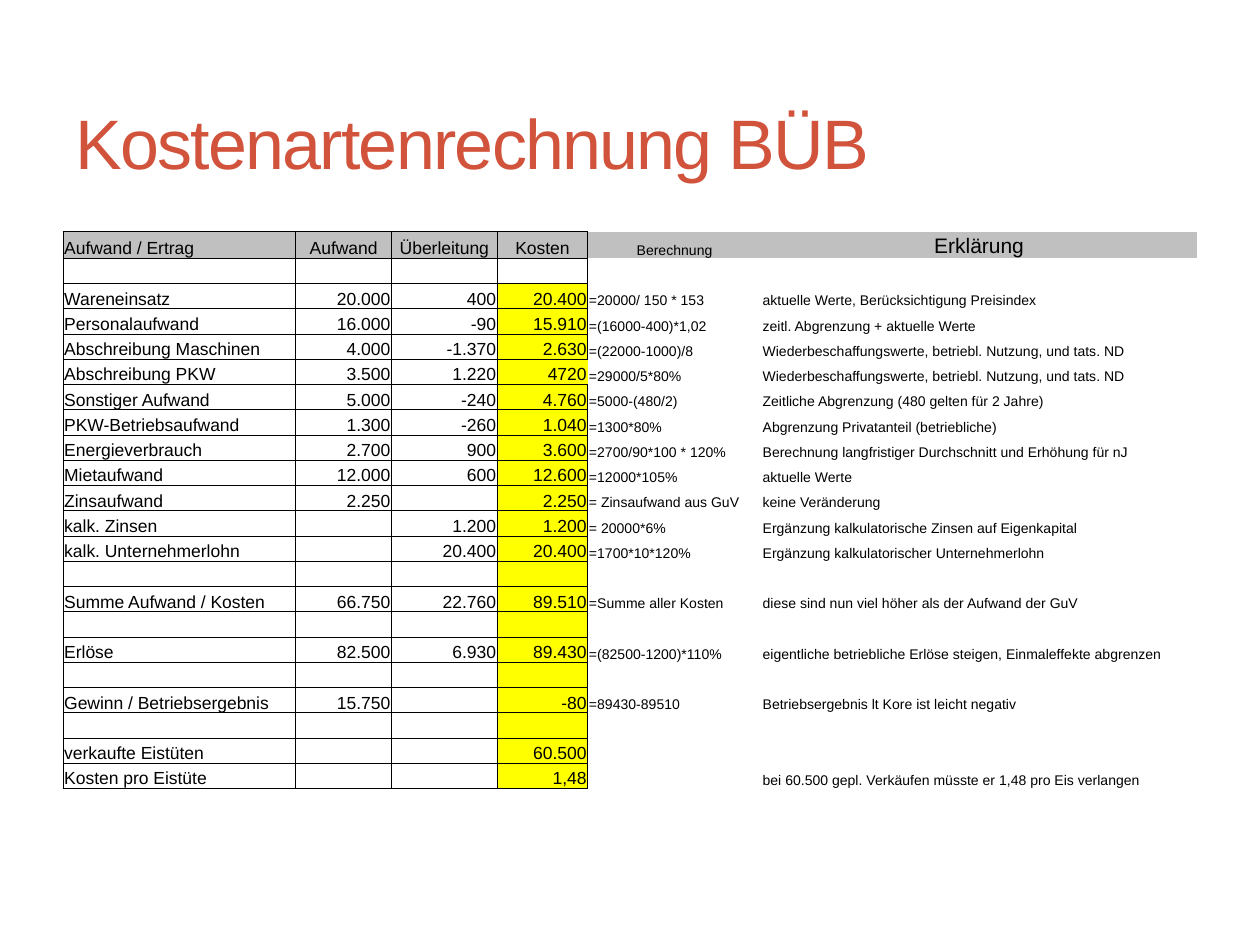
import pptx
import pptx.util
import pptx.dml.color
import pptx.enum.text
import pptx.oxml.ns
from lxml import etree

Inches, Pt = pptx.util.Inches, pptx.util.Pt
RGBColor = pptx.dml.color.RGBColor
ALIGN, ANCHOR = pptx.enum.text.PP_ALIGN, pptx.enum.text.MSO_ANCHOR
qn = pptx.oxml.ns.qn

RED = RGBColor(0xD2, 0x53, 0x3C)
BLACK = RGBColor(0, 0, 0)
GREY = RGBColor(0xC0, 0xC0, 0xC0)
YELLOW = RGBColor(0xFF, 0xFF, 0)
FONT = "Arial"
NO_STYLE = "{2D5ABB26-0587-4C30-8999-92F81FD0307C}"

COL_SHARES = (1.85, 0.76, 0.84, 0.72, 1.38, 3.46)
ROW_COUNT = 22
COST, GRID_COLS = 3, 4  # cost column; columns that carry a grid
HEADER_SIZES = (10, 10, 10, 10, 8, 12)
BODY_SIZES = (10, 10, 10, 10, 8, 8)
OPEN_ROW = "Abschreibung PKW"  # its cost cell is open on the right

BLANK = ("",) * 6
ROWS = [
    ("Aufwand / Ertrag", "Aufwand", "Überleitung", "Kosten", "Berechnung", "Erklärung"),
    BLANK,
    ("Wareneinsatz", "20.000", "400", "20.400", "=20000/ 150 * 153",
     "aktuelle Werte, Berücksichtigung Preisindex"),
    ("Personalaufwand", "16.000", "-90", "15.910", "=(16000-400)*1,02",
     "zeitl. Abgrenzung + aktuelle Werte"),
    ("Abschreibung Maschinen", "4.000", "-1.370", "2.630", "=(22000-1000)/8",
     "Wiederbeschaffungswerte, betriebl. Nutzung, und tats. ND"),
    (OPEN_ROW, "3.500", "1.220", "4720", "=29000/5*80%",
     "Wiederbeschaffungswerte, betriebl. Nutzung, und tats. ND"),
    ("Sonstiger Aufwand", "5.000", "-240", "4.760", "=5000-(480/2)",
     "Zeitliche Abgrenzung (480 gelten für 2 Jahre)"),
    ("PKW-Betriebsaufwand", "1.300", "-260", "1.040", "=1300*80%",
     "Abgrenzung Privatanteil (betriebliche)"),
    ("Energieverbrauch", "2.700", "900", "3.600", "=2700/90*100 * 120%",
     "Berechnung langfristiger Durchschnitt und Erhöhung für nJ"),
    ("Mietaufwand", "12.000", "600", "12.600", "=12000*105%", "aktuelle Werte"),
    ("Zinsaufwand", "2.250", "", "2.250", "= Zinsaufwand aus GuV", "keine Veränderung"),
    ("kalk. Zinsen", "", "1.200", "1.200", "= 20000*6%",
     "Ergänzung kalkulatorische Zinsen auf Eigenkapital"),
    ("kalk. Unternehmerlohn", "", "20.400", "20.400", "=1700*10*120%",
     "Ergänzung kalkulatorischer Unternehmerlohn"),
    BLANK,
    ("Summe Aufwand / Kosten", "66.750", "22.760", "89.510", "=Summe aller Kosten",
     "diese sind nun viel höher als der Aufwand der GuV"),
    BLANK,
    ("Erlöse", "82.500", "6.930", "89.430", "=(82500-1200)*110%",
     "eigentliche betriebliche Erlöse steigen, Einmaleffekte abgrenzen"),
    BLANK,
    ("Gewinn / Betriebsergebnis", "15.750", "", "-80", "=89430-89510",
     "Betriebsergebnis lt Kore ist leicht negativ"),
    BLANK,
    ("verkaufte Eistüten", "", "", "60.500", "", ""),
    ("Kosten pro Eistüte", "", "", "1,48", "",
     "bei 60.500 gepl. Verkäufen müsste er 1,48 pro Eis verlangen"),
]


def style_run(r, size, color):
    r.font.name = FONT
    r.font.size = Pt(size)
    r.font.color.rgb = color


def add_title(slide, x, y, w, h):
    sp = slide.shapes.add_textbox(x, y, w, h)
    tf = sp.text_frame
    tf.word_wrap = True
    tf.vertical_anchor = ANCHOR.MIDDLE
    tf.text = "Kostenartenrechnung BÜB"
    r = tf.paragraphs[0].runs[0]
    style_run(r, 40, RED)
    r.font._element.set("spc", "-100")


def set_borders(cell, sides):
    tcPr = cell._tc.get_or_add_tcPr()
    for side in "LRTB":
        ln = etree.SubElement(tcPr, qn("a:ln" + side), w=str(Pt(0.5)))
        if side in sides:
            fill = etree.SubElement(ln, qn("a:solidFill"))
            etree.SubElement(fill, qn("a:srgbClr"), val=str(BLACK))
        else:
            etree.SubElement(ln, qn("a:noFill"))


def cell_sides(row, col):
    is_open = ROWS[row][0] == OPEN_ROW
    if col < GRID_COLS:
        return "LTB" if is_open and col == COST else "LRTB"
    return "L" if col == GRID_COLS and not is_open else ""


def fill_cell(cell, row, col):
    # Borders and fill
    set_borders(cell, cell_sides(row, col))
    color = GREY if row == 0 else YELLOW if col == COST and row > 1 else None
    if color is None:
        cell.fill.background()
    else:
        cell.fill.solid()
        cell.fill.fore_color.rgb = color

    # Text
    cell.margin_left = cell.margin_right = cell.margin_top = Inches(0.01)
    cell.margin_bottom = 0
    cell.vertical_anchor = ANCHOR.BOTTOM
    size = (HEADER_SIZES if row == 0 else BODY_SIZES)[col]
    p = cell.text_frame.paragraphs[0]
    p.text = ROWS[row][col]
    if row == 0 and col > 0:
        p.alignment = ALIGN.CENTER
    elif 0 < col < GRID_COLS:
        p.alignment = ALIGN.RIGHT
    for r in p.runs:
        style_run(r, size, BLACK)
    if not p.runs:  # keeps empty rows from growing
        etree.SubElement(p._p, qn("a:endParaRPr"), sz=str(size * 100))


def add_cost_table(slide, x, y, w, h):
    shape = slide.shapes.add_table(ROW_COUNT, len(COL_SHARES), x, y, w, h)
    table = shape.table
    table.first_row = table.horz_banding = False
    table._tbl.tblPr.find(qn("a:tableStyleId")).text = NO_STYLE
    for column, share in zip(table.columns, COL_SHARES):
        column.width = int(w * share / sum(COL_SHARES))
    for i, row in enumerate(table.rows):
        row.height = int(h / ROW_COUNT)
        for j, cell in enumerate(row.cells):
            fill_cell(cell, i, j)


def main():
    prs = pptx.Presentation()
    prs.slide_width, prs.slide_height = Inches(10), Inches(7.5)
    slide = prs.slides.add_slide(prs.slide_layouts[6])
    left, width = int(prs.slide_width * 0.05), int(prs.slide_width * 0.9)
    add_title(slide, left, Inches(0.58), width, Inches(1.08))
    add_cost_table(slide, left, Inches(1.84), width, Inches(4.41))
    prs.save("out.pptx")


if __name__ == "__main__":
    main()
